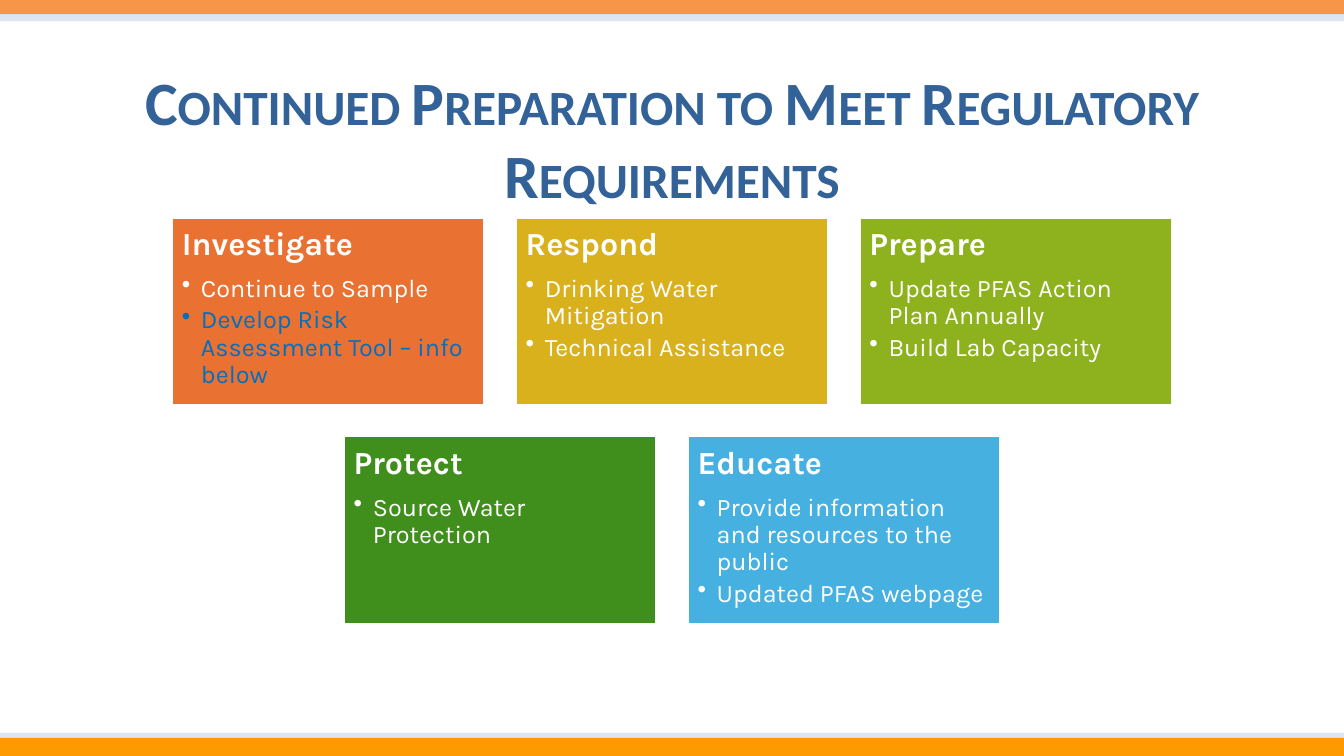
from dataclasses import dataclass

from lxml import etree
from pptx import Presentation
from pptx import util as u
from pptx.dml.color import RGBColor
from pptx.enum import shapes, text
from pptx.oxml import ns

WHITE = RGBColor(0xFF, 0xFF, 0xFF)
NAVY = RGBColor(0x32, 0x62, 0x97)
BLUE = RGBColor(0x00, 0x70, 0xC0)
RUST = RGBColor(0xE9, 0x71, 0x32)
GOLD = RGBColor(0xD8, 0xB1, 0x1D)
LIME = RGBColor(0x8E, 0xB2, 0x1E)
GREEN = RGBColor(0x40, 0x8E, 0x1C)
SKY = RGBColor(0x46, 0xB1, 0xE1)
PALE = RGBColor(0xDC, 0xE6, 0xF2)
ORANGE = RGBColor(0xF7, 0x96, 0x46)
AMBER = RGBColor(0xFF, 0x99, 0x00)

SLIDE_WIDTH, SLIDE_HEIGHT = 13.33, 7.5
CARD_WIDTH, CARD_HEIGHT, CARD_GAP = 3.1, 1.86, 0.31
CARDS_TOP = 2.16
BULLET_INDENT = 0.19


@dataclass
class Band:
    top: float
    height: float
    color: RGBColor


@dataclass
class Action:
    label: str
    color: RGBColor


@dataclass
class Card:
    heading: str
    fill: RGBColor
    actions: list[Action]


BANDS = [
    Band(0.1, 0.11, PALE),
    Band(0, 0.14, ORANGE),
    Band(7.27, 0.1, PALE),
    Band(7.32, 0.18, AMBER),
]

CARD_ROWS = [
    [
        Card("Investigate", RUST, [
            Action("Continue to Sample", WHITE),
            Action("Develop Risk Assessment Tool – info below", BLUE),
        ]),
        Card("Respond", GOLD, [
            Action("Drinking Water Mitigation", WHITE),
            Action("Technical Assistance", WHITE),
        ]),
        Card("Prepare", LIME, [
            Action("Update PFAS Action Plan Annually", WHITE),
            Action("Build Lab Capacity", WHITE),
        ]),
    ],
    [
        Card("Protect", GREEN, [Action("Source Water Protection", WHITE)]),
        Card("Educate", SKY, [
            Action("Provide information and resources to the public", WHITE),
            Action("Updated PFAS webpage", WHITE),
        ]),
    ],
]


def write(paragraph, words: str, *, size: float, color: RGBColor, font: str = "Karla",
          bold: bool = False, small_caps: bool = False, bullet: bool = False,
          align=text.PP_ALIGN.LEFT, line_spacing: float = 0.9, after: float = 0) -> None:
    """Fill a paragraph with one formatted run."""
    if bullet:
        paragraph.level = 1
        properties = paragraph._p.get_or_add_pPr()
        properties.set("marL", str(u.Inches(BULLET_INDENT)))
        properties.set("indent", str(-u.Inches(BULLET_INDENT)))
        etree.SubElement(properties, ns.qn("a:buChar")).set("char", "•")
    paragraph.alignment = align
    paragraph.line_spacing = line_spacing
    paragraph.space_before = u.Pt(0)
    paragraph.space_after = u.Pt(after)
    run = paragraph.add_run()
    run.text = words
    run.font.name = font
    run.font.size = u.Pt(size)
    run.font.bold = bold
    run.font.color.rgb = color
    if small_caps:
        run._r.get_or_add_rPr().set("cap", "small")


def add_rectangle(slide, left: float, top: float, width: float, height: float,
                  fill: RGBColor):
    rectangle = slide.shapes.add_shape(
        shapes.MSO_SHAPE.RECTANGLE,
        u.Inches(left), u.Inches(top), u.Inches(width), u.Inches(height))
    rectangle.shadow.inherit = False
    rectangle.fill.solid()
    rectangle.fill.fore_color.rgb = fill
    rectangle.line.fill.background()
    return rectangle


def add_card(slide, card: Card, left: float, top: float) -> None:
    panel = add_rectangle(slide, left, top, CARD_WIDTH, CARD_HEIGHT, card.fill)
    panel.line.color.rgb = WHITE
    panel.line.width = u.Pt(1.5)
    frame = panel.text_frame
    frame.word_wrap = True
    frame.vertical_anchor = text.MSO_ANCHOR.TOP
    frame.margin_left = frame.margin_right = u.Inches(0.1)
    frame.margin_top = frame.margin_bottom = u.Inches(0.1)
    write(frame.paragraphs[0], card.heading, size=23, color=WHITE, bold=True, after=9.4)
    for action in card.actions:
        write(frame.add_paragraph(), action.label, size=18, color=action.color,
              bullet=True, after=3)


def add_title(slide, words: str) -> None:
    title = slide.shapes.title
    title.left, title.top = u.Inches(1.1), u.Inches(0.58)
    title.width, title.height = u.Inches(11.13), u.Inches(1.58)
    frame = title.text_frame
    frame.word_wrap = True
    frame.auto_size = text.MSO_AUTO_SIZE.SHAPE_TO_FIT_TEXT
    frame.vertical_anchor = text.MSO_ANCHOR.TOP
    write(frame.paragraphs[0], words, size=44, color=NAVY, font="Calibri", bold=True,
          small_caps=True, align=text.PP_ALIGN.CENTER, line_spacing=1.0)


def main() -> None:
    deck = Presentation()
    deck.slide_width = u.Inches(SLIDE_WIDTH)
    deck.slide_height = u.Inches(SLIDE_HEIGHT)
    slide = deck.slides.add_slide(deck.slide_layouts[5])

    # Bands along the top and bottom edges
    for band in BANDS:
        add_rectangle(slide, 0, band.top, SLIDE_WIDTH, band.height, band.color)

    # Title
    add_title(slide, "Continued Preparation to Meet Regulatory Requirements")

    # Cards, each row centred on the slide
    pitch = CARD_WIDTH + CARD_GAP
    for row, cards in enumerate(CARD_ROWS):
        row_left = (SLIDE_WIDTH - len(cards) * pitch + CARD_GAP) / 2
        row_top = CARDS_TOP + row * (CARD_HEIGHT + CARD_GAP)
        for column, card in enumerate(cards):
            add_card(slide, card, row_left + column * pitch, row_top)

    deck.save("out.pptx")


if __name__ == "__main__":
    main()
